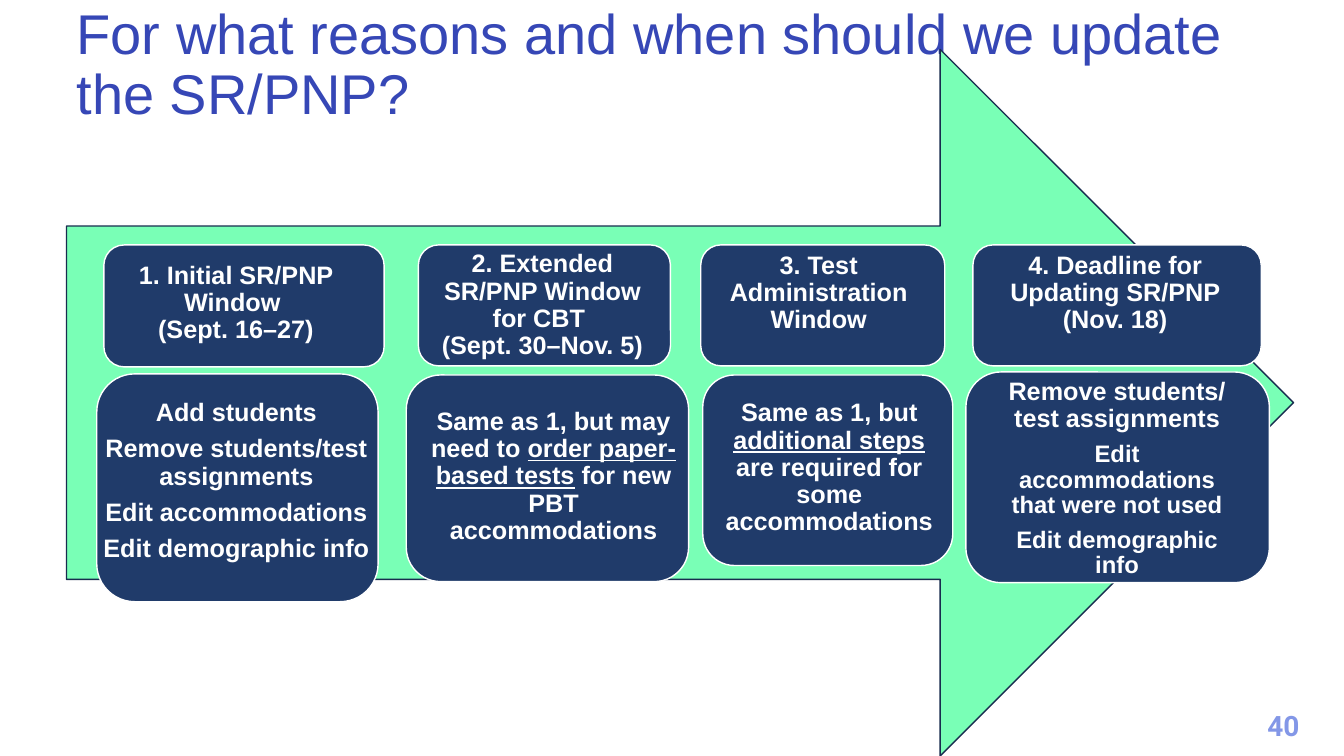
from pptx import Presentation
from pptx.dml.color import RGBColor
from pptx.enum.shapes import MSO_SHAPE
from pptx.enum.text import MSO_ANCHOR, MSO_AUTO_SIZE, PP_ALIGN
from pptx.util import Inches, Pt

ARROW, ROUNDED = MSO_SHAPE.RIGHT_ARROW, MSO_SHAPE.ROUNDED_RECTANGLE
MIDDLE, BOTTOM = MSO_ANCHOR.MIDDLE, MSO_ANCHOR.BOTTOM
CENTER, NO_FIT = PP_ALIGN.CENTER, MSO_AUTO_SIZE.NONE
TITLE_ONLY = 5
COLORS = {"title": "3647B6", "arrow": "79FFB6", "arrow_line": "182C4E",
          "card": "203B6A", "white": "FFFFFF", "number": "8397E7"}
CARD_FONT = {"name": "Arial", "size": Pt(18), "bold": True}
TITLE_FONT = {"name": "Arial", "size": Pt(40), "bold": False}
NUMBER_FONT = {"name": "Roboto", "size": Pt(20), "bold": True}
INSETS = ("margin_left", "margin_top", "margin_right", "margin_bottom")

# Each card: box, text offset and size within the box, space after, paragraphs.
CARDS = [
    ((1.03, 2.43, 2.78, 1.21), (-0.02, 0, 2.66, 1.16), 0,
     [("1. Initial SR/PNP Window ", 18), ("(Sept. 16–27)", 18)]),
    ((4.15, 2.43, 2.5, 1.2), (0.01, 0.14, 2.44, 0.92), 0,
     [("2. Extended SR/PNP Window for CBT ", 18), ("(Sept. 30–Nov. 5)", 18)]),
    ((6.95, 2.43, 2.42, 1.2), (-0.04, 0.02, 2.42, 0.92), 6.3,
     [("3. Test Administration Window", 18)]),
    ((9.65, 2.43, 2.86, 1.2), (0.29, 0.02, 2.24, 0.92), 6.3,
     [("4. Deadline for Updating SR/PNP (Nov. 18)", 18)]),
    ((0.96, 3.71, 2.79, 2.26), (-0.08, -0.02, 2.93, 2.17), 6.3,
     [("Add students", 18), ("Remove students/test assignments", 18),
      ("Edit accommodations", 18), ("Edit demographic info", 18)]),
    ((4.03, 3.72, 2.8, 2.05), (0.12, 0.37, 2.68, 1.28), 6.3,
     [("Same as 1, but may need to _order paper-based tests_"
       " for new PBT accommodations", 18)]),
    ((6.97, 3.72, 2.48, 1.89), (0.07, 0.07, 2.37, 1.71), 6.3,
     [("Same as 1, but _additional steps_"
       " are required for some accommodations", 18)]),
    ((9.58, 3.69, 3.01, 2.09), (0.28, 0.47, 2.44, 1.18), 6.3,
     [("Remove students/\ntest assignments", 18),
      ("Edit accommodations that were not used", 17),
      ("Edit demographic info", 17)]),
]


def rgb(name):
    """Return the named colour."""
    return RGBColor.from_string(COLORS[name])


def set_font(font, values, color):
    """Apply a dict of font values and a colour."""
    for key, value in values.items():
        setattr(font, key, value)
    font.color.rgb = rgb(color)


def add_outline(slide, kind, box, fill, line):
    """Add a filled preset shape with a thin outline."""
    sp = slide.shapes.add_shape(kind, *map(Inches, box))
    sp.shadow.inherit = False
    sp.fill.solid()
    sp.fill.fore_color.rgb = rgb(fill)
    sp.line.color.rgb = rgb(line)
    sp.line.width = Pt(1)


def add_runs(p, text, size):
    """Fill a paragraph, underlining the parts between underscores."""
    for i, part in enumerate(text.split("_")):
        for j, line in enumerate(part.split("\n")):
            if j:
                p.add_line_break()
            r = p.add_run()
            r.text = line
            set_font(r.font, CARD_FONT | {"size": Pt(size)}, "white")
            if i % 2:
                r.font.underline = True


def add_card(slide, box, text_box, space_after, paragraphs):
    """Add a rounded card and its text, placed relative to the card."""
    add_outline(slide, ROUNDED, box, "card", "white")
    dx, dy, width, height = text_box
    place = (box[0] + dx, box[1] + dy, width, height)
    tf = slide.shapes.add_textbox(*map(Inches, place)).text_frame
    tf.word_wrap = True
    tf.vertical_anchor = MIDDLE
    for side in INSETS:
        setattr(tf, side, Inches(0.07))
    for i, (text, size) in enumerate(paragraphs):
        p = tf.add_paragraph() if i else tf.paragraphs[0]
        p.alignment = CENTER
        p.line_spacing = 0.9
        p.space_after = Pt(space_after)
        add_runs(p, text, size)


def add_title(slide, box, text):
    """Move and format the title placeholder."""
    sp = slide.shapes.title
    sp.left, sp.top, sp.width, sp.height = map(Inches, box)
    tf = sp.text_frame
    tf.text = text
    tf.word_wrap = True
    tf.auto_size = NO_FIT
    tf.vertical_anchor = BOTTOM
    p = tf.paragraphs[0]
    p.alignment = PP_ALIGN.LEFT
    p.line_spacing = 0.9
    p.space_before = Pt(0)
    set_font(p.runs[0].font, TITLE_FONT, "title")


def add_number(slide, box, text):
    """Add the page number."""
    tf = slide.shapes.add_textbox(*map(Inches, box)).text_frame
    tf.word_wrap = True
    p = tf.paragraphs[0]
    p.alignment = CENTER
    r = p.add_run()
    r.text = text
    set_font(r.font, NUMBER_FONT, "number")


def main():
    """Build and save the slide."""
    prs = Presentation()
    prs.slide_width, prs.slide_height = Inches(13.33), Inches(7.5)
    slide = prs.slides.add_slide(prs.slide_layouts[TITLE_ONLY])
    add_title(slide, (0.66, 0.43, 12.02, 0.88),
              "For what reasons and when should we update the SR/PNP?")
    add_outline(slide, ARROW, (0.66, 0.49, 12.17, 7.01), "arrow", "arrow_line")
    for card in CARDS:
        add_card(slide, *card)
    add_number(slide, (12.42, 6.98, 0.62, 0.44), "40")
    prs.save("out.pptx")


if __name__ == "__main__":
    main()
